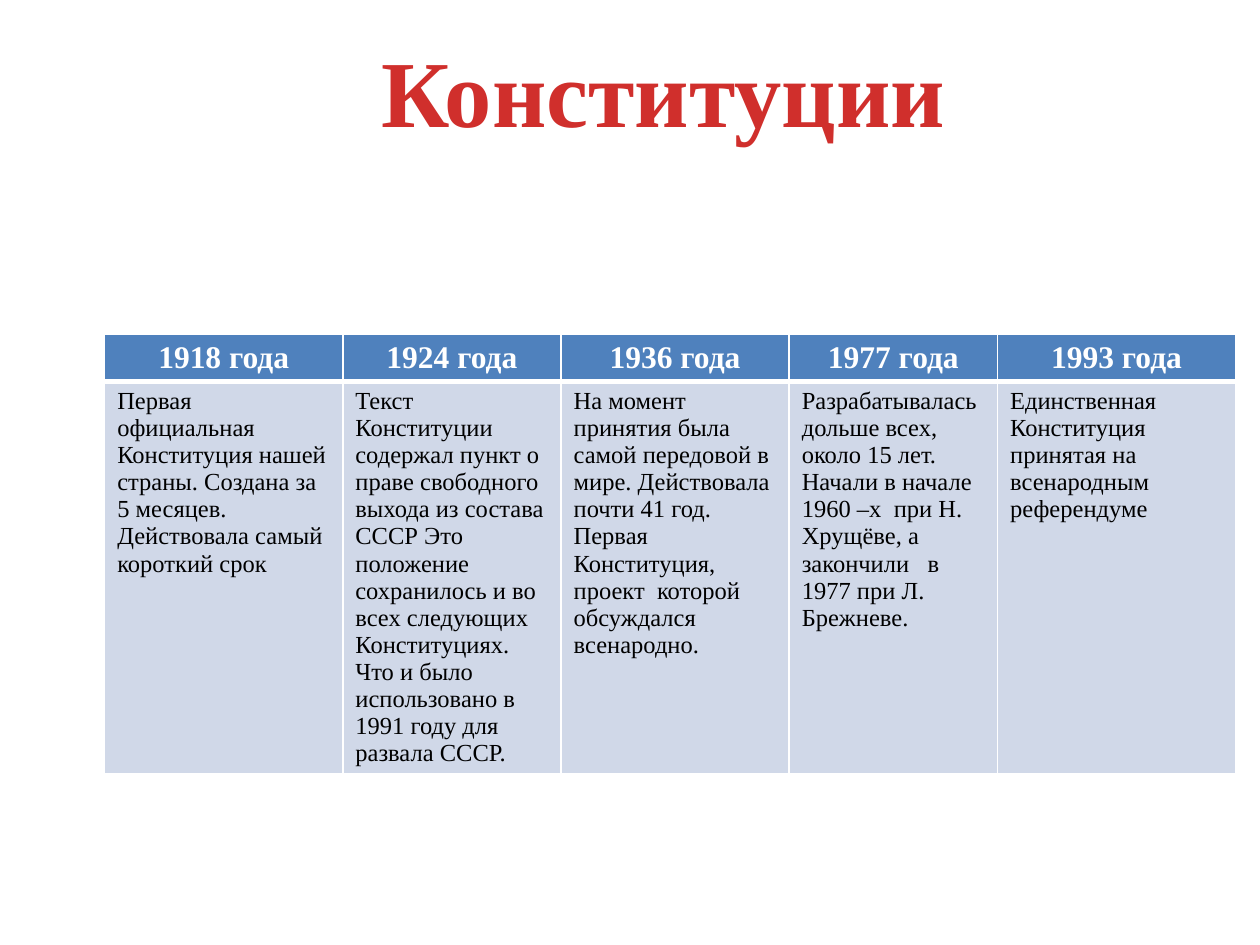
from dataclasses import dataclass

from lxml import etree
from pptx import Presentation
from pptx.dml.color import RGBColor
from pptx.enum.text import MSO_ANCHOR, PP_ALIGN
from pptx.oxml.ns import qn
from pptx.util import Cm, Pt

CENTER, LEFT = PP_ALIGN.CENTER, PP_ALIGN.LEFT
TOP = MSO_ANCHOR.TOP
FONT = "Times New Roman"
RED = RGBColor(0xD0, 0x2F, 0x2C)
BLUE = RGBColor(0x4F, 0x81, 0xBD)
PALE_BLUE = RGBColor(0xD0, 0xD8, 0xE8)
WHITE = RGBColor(0xFF, 0xFF, 0xFF)
BLACK = RGBColor(0x00, 0x00, 0x00)


@dataclass
class Constitution:
    year: str
    width: float
    notes: list[str]


@dataclass
class CellStyle:
    size: int
    bold: bool
    color: RGBColor
    fill: RGBColor
    align: PP_ALIGN
    top_border: int
    bottom_border: int


HEADER = CellStyle(18, True, WHITE, BLUE, CENTER, 1, 3)
BODY = CellStyle(14, False, BLACK, PALE_BLUE, LEFT, 3, 1)
ROW_HEIGHTS = (0.94, 7.9)

CONSTITUTIONS = [
    Constitution("1918 года", 4.8, [
        "Первая официальная Конституция нашей страны. Создана за 5 месяцев. "
        "Действовала самый короткий срок"]),
    Constitution("1924 года", 4.4, [
        "Текст Конституции содержал пункт о праве свободного выхода из состава "
        "СССР Это положение сохранилось и во всех следующих Конституциях.",
        "Что и было использовано в 1991 году для развала СССР."]),
    Constitution("1936 года", 4.6, [
        "На момент принятия была самой передовой в мире. "
        "Действовала  почти 41 год.",
        "Первая Конституция, проект  которой обсуждался всенародно."]),
    Constitution("1977 года", 4.2, [
        "Разрабатывалась дольше всех, около 15 лет. Начали в начале 1960 –х  "
        "при Н. Хрущёве, а закончили   в 1977 при Л. Брежневе."]),
    Constitution("1993 года", 4.8, [
        "Единственная Конституция принятая на всенародным референдуме"]),
]


def set_font(p, size: int, bold: bool, color: RGBColor) -> None:
    p.font.name = FONT
    p.font.size = Pt(size)
    p.font.bold = bold
    p.font.color.rgb = color


def add_borders(cell, top: int, bottom: int) -> None:
    """Draw white borders; must run before the cell fill is set."""
    tc_pr = cell._tc.get_or_add_tcPr()
    for side, width in (("L", 1), ("R", 1), ("T", top), ("B", bottom)):
        ln = etree.SubElement(tc_pr, qn(f"a:ln{side}"), w=str(Pt(width)))
        fill = etree.SubElement(ln, qn("a:solidFill"))
        etree.SubElement(fill, qn("a:srgbClr"), val=str(WHITE))


def fill_cell(cell, lines: list[str], style: CellStyle) -> None:
    add_borders(cell, style.top_border, style.bottom_border)
    cell.fill.solid()
    cell.fill.fore_color.rgb = style.fill
    cell.text = "\n".join(lines)
    for p in cell.text_frame.paragraphs:
        p.alignment = style.align
        set_font(p, style.size, style.bold, style.color)


def add_title(s, text: str) -> None:
    title = s.shapes.title
    title.left, title.top = Cm(7.37), Cm(0.53)
    title.width, title.height = Cm(12), Cm(2.57)
    tf = title.text_frame
    tf.text = text
    tf.word_wrap = False
    tf.vertical_anchor = TOP
    p = tf.paragraphs[0]
    p.alignment = CENTER
    set_font(p, 54, True, RED)


def add_constitution_table(s, columns: list[Constitution]) -> None:
    width = Cm(sum(c.width for c in columns))
    table = s.shapes.add_table(2, len(columns), Cm(2.11), Cm(6.73),
                               width, Cm(sum(ROW_HEIGHTS))).table
    table.horz_banding = False
    for row, height in zip(table.rows, ROW_HEIGHTS):
        row.height = Cm(height)
    for i, column in enumerate(columns):
        table.columns[i].width = Cm(column.width)
        fill_cell(table.cell(0, i), [column.year], HEADER)
        fill_cell(table.cell(1, i), column.notes, BODY)


def main() -> None:
    prs = Presentation()
    prs.slide_width, prs.slide_height = Cm(25.4), Cm(19.05)
    s = prs.slides.add_slide(prs.slide_layouts[5])
    add_title(s, "Конституции")
    add_constitution_table(s, CONSTITUTIONS)
    prs.save("out.pptx")


if __name__ == "__main__":
    main()
